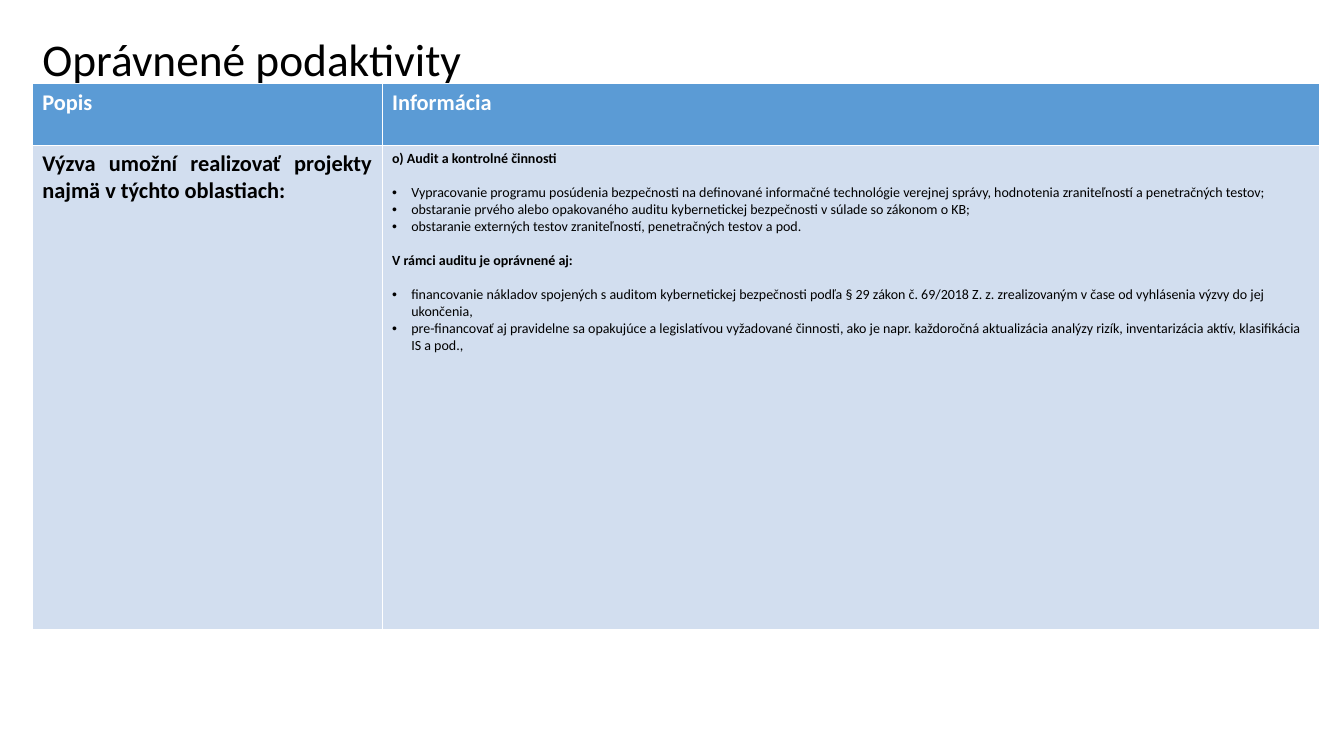
from pptx import Presentation
from pptx.dml.color import RGBColor
from pptx.enum.text import MSO_ANCHOR, PP_ALIGN
from pptx.oxml.xmlchemy import OxmlElement
from pptx.util import Inches, Pt


def add_span(para, text, size, color, bold=False):
    span = para.add_run()
    span.text = text
    span.font.name = "Calibri"
    span.font.size = Pt(size)
    span.font.bold = bold
    span.font.color.rgb = RGBColor.from_string(color)


def add_bullet(para):
    properties = para._p.get_or_add_pPr()
    properties.set("marL", str(Inches(0.19)))
    properties.set("indent", str(Inches(-0.19)))
    font = OxmlElement("a:buFont")
    font.set("typeface", "Arial")
    bullet = OxmlElement("a:buChar")
    bullet.set("char", "•")
    properties.extend([font, bullet])


BLACK, WHITE, BLUE, PALE_BLUE = "000000", "FFFFFF", "5B9BD5", "D2DEEF"

sections = [
    ("o) Audit a kontrolné činnosti", [
        "Vypracovanie programu posúdenia bezpečnosti na definované informačné technológie verejnej správy, hodnotenia zraniteľností a penetračných testov;",
        "obstaranie prvého alebo opakovaného auditu kybernetickej bezpečnosti v súlade so zákonom o KB;",
        "obstaranie externých testov zraniteľností, penetračných testov a pod.",
    ]),
    ("V rámci auditu je oprávnené aj:", [
        "financovanie nákladov spojených s auditom kybernetickej bezpečnosti podľa § 29 zákon č. 69/2018 Z. z. zrealizovaným v čase od vyhlásenia výzvy do jej ukončenia,",
        "pre-financovať aj pravidelne sa opakujúce a legislatívou vyžadované činnosti, ako je napr. každoročná aktualizácia analýzy rizík, inventarizácia aktív, klasifikácia IS a pod.,",
    ]),
]

deck = Presentation()
deck.slide_width, deck.slide_height = Inches(13.33), Inches(7.5)
page = deck.slides.add_slide(deck.slide_layouts[5])

title = page.shapes.title
title.left, title.top = Inches(0.32), Inches(0.32)
title.width, title.height = Inches(10), Inches(0.51)
frame = title.text_frame
frame.word_wrap = True
frame.vertical_anchor = MSO_ANCHOR.MIDDLE
frame.margin_top = Inches(0.12)
para = frame.paragraphs[0]
para.alignment = PP_ALIGN.LEFT
para.line_spacing = 0.9
add_span(para, "Oprávnené podaktivity", 32.4, BLACK)

table = page.shapes.add_table(2, 2, Inches(0.32), Inches(0.83), Inches(12.77), Inches(5.42)).table
for column, width in zip(table.columns, (3.47, 9.3)):
    column.width = Inches(width)
for row, height, color in zip(table.rows, (0.61, 4.81), (BLUE, PALE_BLUE)):
    row.height = Inches(height)
    for cell in row.cells:
        cell.fill.solid()
        cell.fill.fore_color.rgb = RGBColor.from_string(color)

for index, heading in enumerate(("Popis", "Informácia")):
    add_span(table.cell(0, index).text_frame.paragraphs[0], heading, 16, WHITE, True)

para = table.cell(1, 0).text_frame.paragraphs[0]
para.alignment = PP_ALIGN.JUSTIFY
add_span(para, "Výzva umožní realizovať projekty najmä v týchto oblastiach:", 16, BLACK, True)

frame = table.cell(1, 1).text_frame
for index, (heading, items) in enumerate(sections):
    para = frame.add_paragraph() if index else frame.paragraphs[0]
    para.space_before = Pt(12.2 if index else 0)
    para.space_after = Pt(12.2)
    add_span(para, heading, 10, BLACK, True)
    for item in items:
        para = frame.add_paragraph()
        add_bullet(para)
        add_span(para, item, 10, BLACK)

deck.save("out.pptx")
